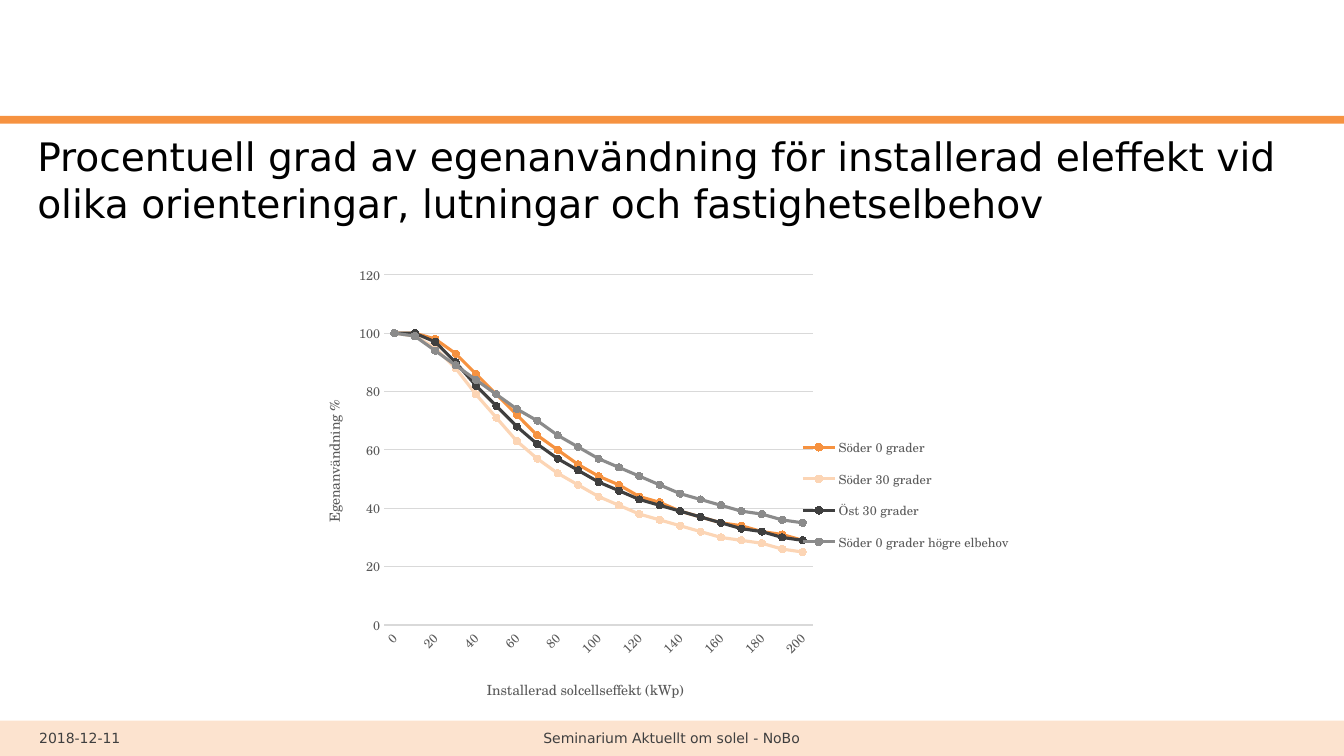
"""Build a slide with a line chart of self-consumption against installed solar power."""
import pptx
import pptx.chart.data
import pptx.dml.color
import pptx.enum.chart
import pptx.enum.shapes
import pptx.enum.text
import pptx.oxml
import pptx.oxml.ns
import pptx.util
from pptx.util import Cm, Pt


class Theme:
    orange = pptx.dml.color.RGBColor.from_string("F69240")
    peach = pptx.dml.color.RGBColor.from_string("FCD5B5")
    dark = pptx.dml.color.RGBColor.from_string("3F3F3F")
    gray = pptx.dml.color.RGBColor.from_string("8B8B8B")
    label = pptx.dml.color.RGBColor.from_string("595959")
    grid = pptx.dml.color.RGBColor.from_string("D9D9D9")
    black = pptx.dml.color.RGBColor.from_string("000000")
    text_font = "DejaVu Sans"
    chart_font = "TeX Gyre Schola"
    title_size = Pt(28)
    small_size = Pt(10)
    label_size = Pt(9)


def set_font(font, name, size, color):
    font.name, font.size, font.bold = name, size, False
    font.color.rgb = color


def place(element, inner=False, **fractions):
    qn = pptx.oxml.ns.qn
    for old in element.findall(qn("c:layout")):
        element.remove(old)
    target = '<c:layoutTarget val="inner"/>' if inner else ""
    modes = '<c:xMode val="edge"/><c:yMode val="edge"/>'
    values = "".join(f'<c:{key} val="{value}"/>' for key, value in fractions.items())
    layout = pptx.oxml.parse_xml(
        f'<c:layout {pptx.oxml.ns.nsdecls("c")}><c:manualLayout>'
        f"{target}{modes}{values}</c:manualLayout></c:layout>")
    overlay = element.find(qn("c:overlay"))
    if overlay is None:
        element.insert(0, layout)
    else:
        overlay.addprevious(layout)


prs = pptx.Presentation()
prs.slide_width, prs.slide_height = Cm(33.87), Cm(19.05)
s = prs.slides.add_slide(prs.slide_layouts[6])

for top, height, opacity in [(18.16, 0.89, 25), (2.92, 0.2, 100)]:
    sp = s.shapes.add_shape(pptx.enum.shapes.MSO_SHAPE.RECTANGLE,
                            0, Cm(top), prs.slide_width, Cm(height))
    sp.shadow.inherit = False
    sp.fill.solid()
    sp.fill.fore_color.rgb = Theme.orange
    sp.line.fill.background()
    if opacity < 100:
        color = sp._element.spPr.find(".//" + pptx.oxml.ns.qn("a:srgbClr"))
        color.append(pptx.oxml.parse_xml(
            f'<a:alpha {pptx.oxml.ns.nsdecls("a")} val="{opacity * 1000}"/>'))

TOP, MIDDLE = pptx.enum.text.MSO_ANCHOR.TOP, pptx.enum.text.MSO_ANCHOR.MIDDLE
LEFT, CENTER = pptx.enum.text.PP_ALIGN.LEFT, pptx.enum.text.PP_ALIGN.CENTER
texts = [
    ("Procentuell grad av egenanvändning för installerad eleffekt vid olika "
     "orienteringar, lutningar och fastighetselbehov",
     (0.94, 3.33, 31.9, 2.77), TOP, LEFT, Theme.title_size, Theme.black),
    ("2018-12-11", (0.99, 18.29, 3.71, 0.61), MIDDLE, LEFT, Theme.small_size, Theme.dark),
    ("Seminarium Aktuellt om solel - NoBo", (4.67, 18.29, 24.51, 0.61),
     MIDDLE, CENTER, Theme.small_size, Theme.dark),
]
for text, box, anchor, align, size, color in texts:
    tf = s.shapes.add_textbox(*map(Cm, box)).text_frame
    tf.word_wrap = True
    tf.vertical_anchor = anchor
    tf.margin_left = tf.margin_right = tf.margin_top = tf.margin_bottom = 0
    p = tf.paragraphs[0]
    p.text, p.alignment = text, align
    set_font(p.font, Theme.text_font, size, color)

series = [
    ("Söder 0 grader", Theme.orange,
     [100, 100, 98, 93, 86, 79, 72, 65, 60, 55, 51, 48, 44, 42, 39, 37, 35, 34, 32, 31, 29]),
    ("Söder 30 grader", Theme.peach,
     [100, 99, 95, 88, 79, 71, 63, 57, 52, 48, 44, 41, 38, 36, 34, 32, 30, 29, 28, 26, 25]),
    ("Öst 30 grader", Theme.dark,
     [100, 100, 97, 90, 82, 75, 68, 62, 57, 53, 49, 46, 43, 41, 39, 37, 35, 33, 32, 30, 29]),
    ("Söder 0 grader högre elbehov", Theme.gray,
     [100, 99, 94, 89, 84, 79, 74, 70, 65, 61, 57, 54, 51, 48, 45, 43, 41, 39, 38, 36, 35]),
]
data = pptx.chart.data.CategoryChartData(number_format="0")
data.categories = [str(power) for power in range(0, 201, 10)]
for name, color, values in series:
    data.add_series(name, values)
chart = s.shapes.add_chart(pptx.enum.chart.XL_CHART_TYPE.LINE_MARKERS,
                           Cm(7.52), Cm(6.4), Cm(18.01), Cm(11.66), data).chart
chart.has_title = False
set_font(chart.font, Theme.chart_font, Theme.small_size, Theme.black)
chart.plots[0].vary_by_categories = False
place(chart._chartSpace.chart.plotArea, inner=True, x=0.12, y=0.045, w=0.6, h=0.757)

for line, (name, color, values) in zip(chart.plots[0].series, series):
    line.smooth = False
    line.format.line.color.rgb = color
    line.format.line.width = Pt(2.25)
    line.marker.style = pptx.enum.chart.XL_MARKER_STYLE.CIRCLE
    line.marker.size = 5
    line.marker.format.fill.solid()
    line.marker.format.fill.fore_color.rgb = color
    line.marker.format.line.color.rgb = color

axes = [
    (chart.category_axis, "Installerad solcellseffekt (kWp)", 0, -45, 0.26, 0.91),
    (chart.value_axis, "Egenanvändning %", -90, 0, 0.03, 0.31),
]
for axis, title, title_angle, label_angle, x, y in axes:
    axis.major_tick_mark = axis.minor_tick_mark = pptx.enum.chart.XL_TICK_MARK.NONE
    set_font(axis.tick_labels.font, Theme.chart_font, Theme.label_size, Theme.label)
    axis._element.txPr.bodyPr.set("rot", str(label_angle * 60000))
    tf = axis.axis_title.text_frame
    tf._txBody.bodyPr.set("rot", str(title_angle * 60000))
    p = tf.paragraphs[0]
    p.text = title
    set_font(p.font, Theme.chart_font, Theme.small_size, Theme.label)
    place(axis.axis_title._element, x=x, y=y)

chart.category_axis.format.line.color.rgb = Theme.grid
chart.category_axis.format.line.width = Pt(0.75)
chart.category_axis._element.find(pptx.oxml.ns.qn("c:noMultiLvlLbl")).addprevious(
    pptx.oxml.parse_xml(f'<c:tickLblSkip {pptx.oxml.ns.nsdecls("c")} val="2"/>'))
value_axis = chart.value_axis
value_axis.minimum_scale, value_axis.maximum_scale, value_axis.major_unit = 0, 120, 20
value_axis.format.line.fill.background()
value_axis.major_gridlines.format.line.color.rgb = Theme.grid
value_axis.major_gridlines.format.line.width = Pt(0.75)
value_axis.tick_labels.number_format = "0"
value_axis.tick_labels.number_format_is_linked = False

chart.has_legend = True
chart.legend.position = pptx.enum.chart.XL_LEGEND_POSITION.RIGHT
chart.legend.include_in_layout = False
set_font(chart.legend.font, Theme.chart_font, Theme.label_size, Theme.label)
place(chart.legend._element, x=0.7, y=0.37, w=0.3, h=0.3)

prs.save("out.pptx")
